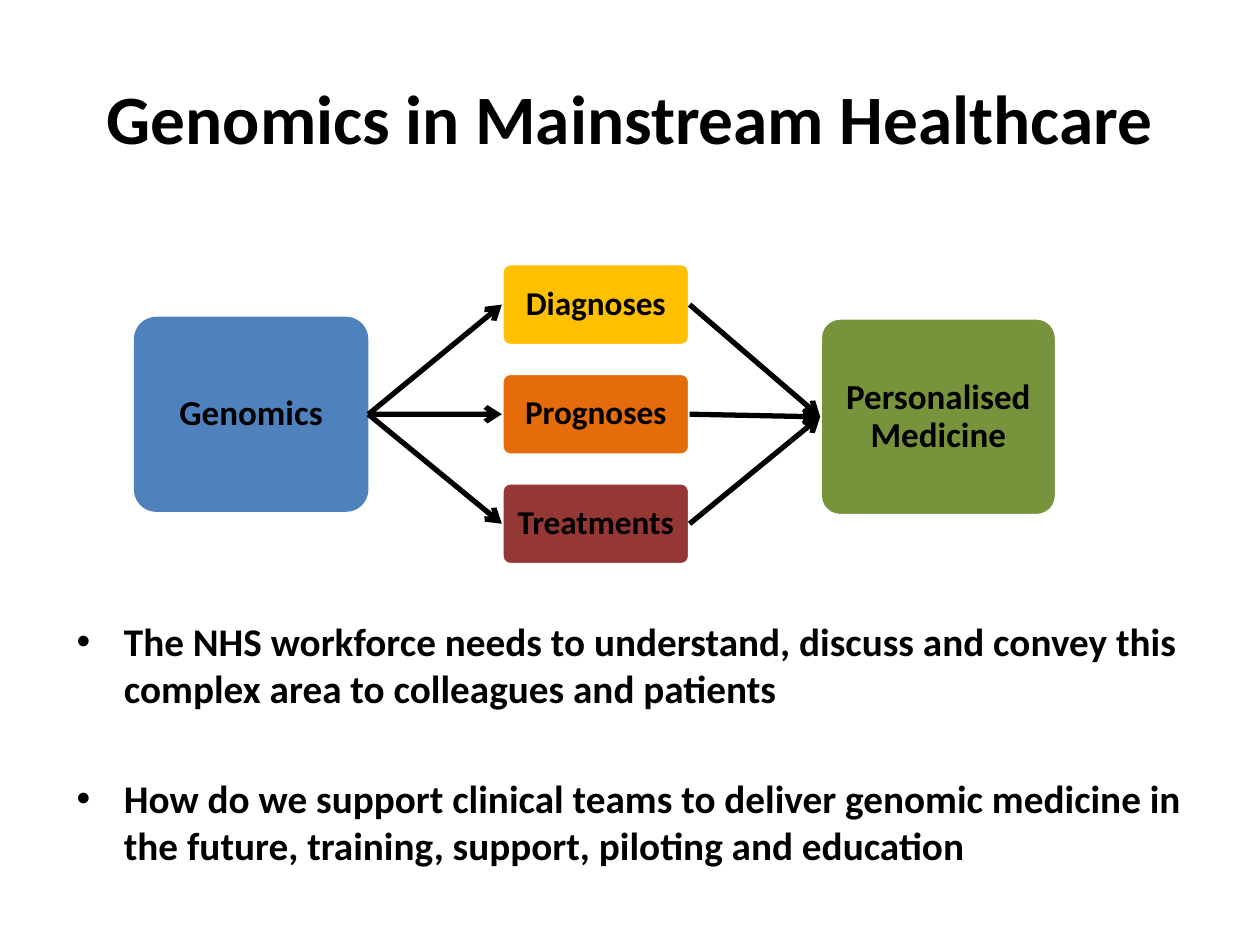
import pptx
import pptx.dml.color
import pptx.enum.shapes
import pptx.enum.text
import pptx.oxml.ns
import pptx.util
from lxml import etree

Pt = pptx.util.Pt
MIDDLE = pptx.enum.text.MSO_ANCHOR.MIDDLE
CENTER = pptx.enum.text.PP_ALIGN.CENTER


def color(value):
    return pptx.dml.color.RGBColor.from_string(value)


def add_element(parent, tag, **attributes):
    return etree.SubElement(parent, pptx.oxml.ns.qn(tag), attributes)


def style_text(para, size):
    for span in para.runs:
        span.font.name = "Calibri"
        span.font.size = Pt(size)
        span.font.bold = True
        span.font.color.rgb = color("000000")


def add_title(page, text):
    box = page.shapes.add_textbox(Pt(36), Pt(21.6), Pt(648), Pt(90))
    frame = box.text_frame
    frame.word_wrap = True
    frame.vertical_anchor = MIDDLE
    frame.text = text
    para = frame.paragraphs[0]
    para.alignment = CENTER
    style_text(para, 39.6)


def add_card(page, text, left, top, width, height, fill, size, inset,
             corner=0.1, outlined=True):
    card = page.shapes.add_shape(
        pptx.enum.shapes.MSO_SHAPE.ROUNDED_RECTANGLE,
        Pt(left), Pt(top), Pt(width), Pt(height))
    card.adjustments[0] = corner
    card.shadow.inherit = False
    card.fill.solid()
    card.fill.fore_color.rgb = color(fill)
    if outlined:
        card.line.color.rgb = color("FFFFFF")
        card.line.width = Pt(2)
    else:
        card.line.fill.background()
    frame = card.text_frame
    frame.word_wrap = True
    frame.vertical_anchor = MIDDLE
    frame.margin_left = frame.margin_right = Pt(inset)
    frame.margin_top = frame.margin_bottom = Pt(inset)
    frame.text = text
    para = frame.paragraphs[0]
    para.alignment = CENTER
    para.line_spacing = 0.9
    style_text(para, size)
    return card


def add_arrow(page, source, target):
    arrow = page.shapes.add_connector(
        pptx.enum.shapes.MSO_CONNECTOR.STRAIGHT,
        source.left + source.width, source.top + source.height // 2,
        target.left, target.top + target.height // 2)
    arrow.line.color.rgb = color("000000")
    arrow.line.width = Pt(3)
    add_element(arrow.line._get_or_add_ln(), "a:tailEnd", type="arrow")
    add_element(arrow._element.spPr, "a:effectLst")


def add_bullets(page, texts):
    box = page.shapes.add_textbox(Pt(36.7), Pt(349.2), Pt(648), Pt(158.4))
    frame = box.text_frame
    frame.word_wrap = True
    for index, text in enumerate(texts):
        para = frame.add_paragraph() if index else frame.paragraphs[0]
        para.text = text
        if index:
            para.space_before = Pt(35.8)
        properties = para._p.get_or_add_pPr()
        properties.set("marL", str(Pt(27)))
        properties.set("indent", str(-Pt(27)))
        add_element(properties, "a:buFont", typeface="Arial")
        add_element(properties, "a:buChar", char="•")
        style_text(para, 22.4)


def main():
    deck = pptx.Presentation()
    deck.slide_width, deck.slide_height = Pt(720), Pt(540)
    page = deck.slides.add_slide(deck.slide_layouts[6])

    add_title(page, "Genomics in Mainstream Healthcare")
    genomics = add_card(page, "Genomics", 76.5, 181, 134, 111.5, "4F81BD",
                        20, 7.2, corner=0.115, outlined=False)
    medicine = add_card(page, "Personalised Medicine", 468.7, 181.7, 135, 113,
                        "77933C", 20, 8.6)
    outcomes = [("Diagnoses", "FFC000"), ("Prognoses", "E46C0A"),
                ("Treatments", "953735")]
    for row, (text, fill) in enumerate(outcomes):
        outcome = add_card(page, text, 286.8, 150.7 + 62.6 * row, 107.3, 46.8,
                           fill, 19, 6)
        add_arrow(page, genomics, outcome)
        add_arrow(page, outcome, medicine)

    add_bullets(page, [
        "The NHS workforce needs to understand, discuss and convey this "
        "complex area to colleagues and patients",
        "How do we support clinical teams to deliver genomic medicine in "
        "the future, training, support, piloting and education",
    ])
    deck.save("out.pptx")


if __name__ == "__main__":
    main()
